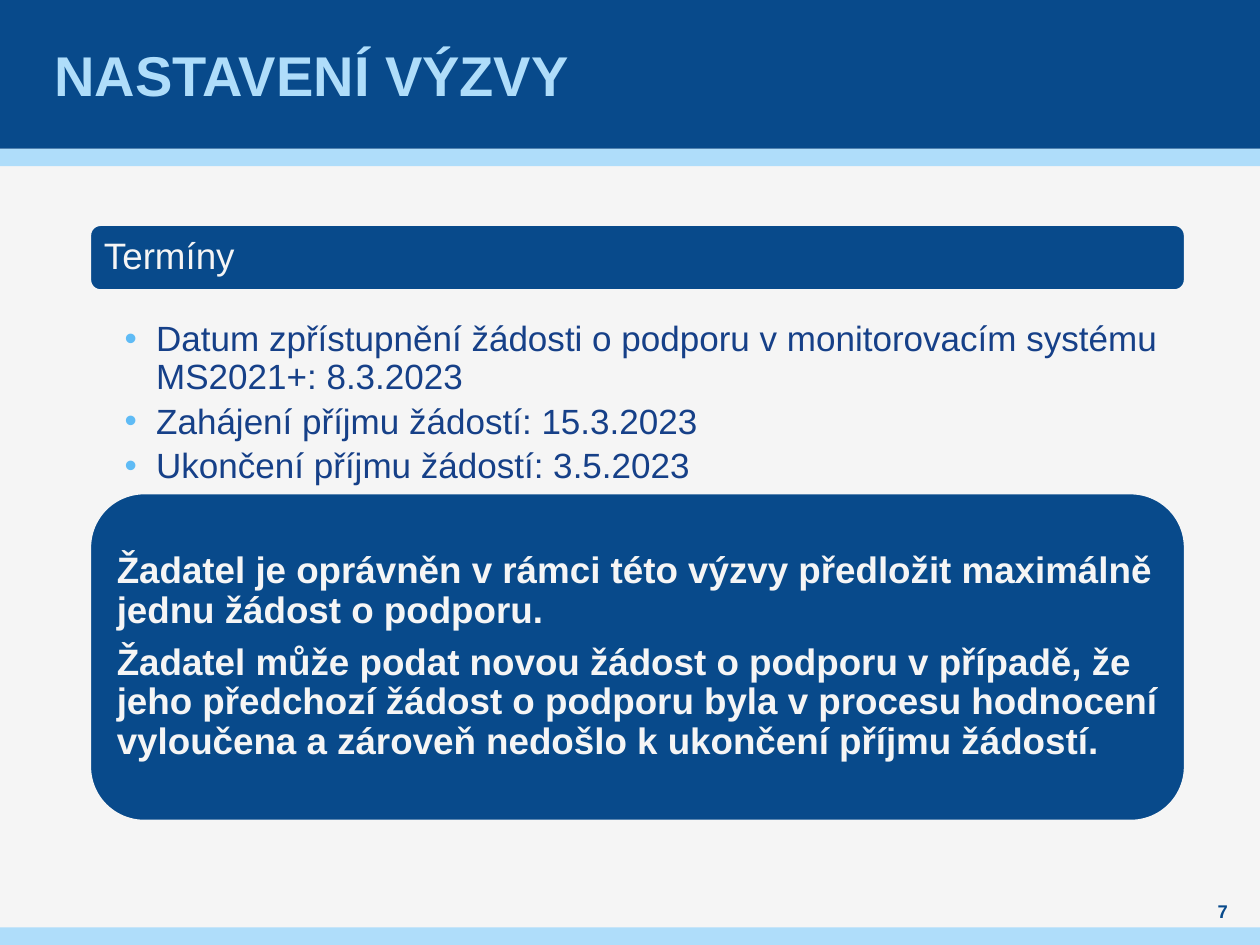
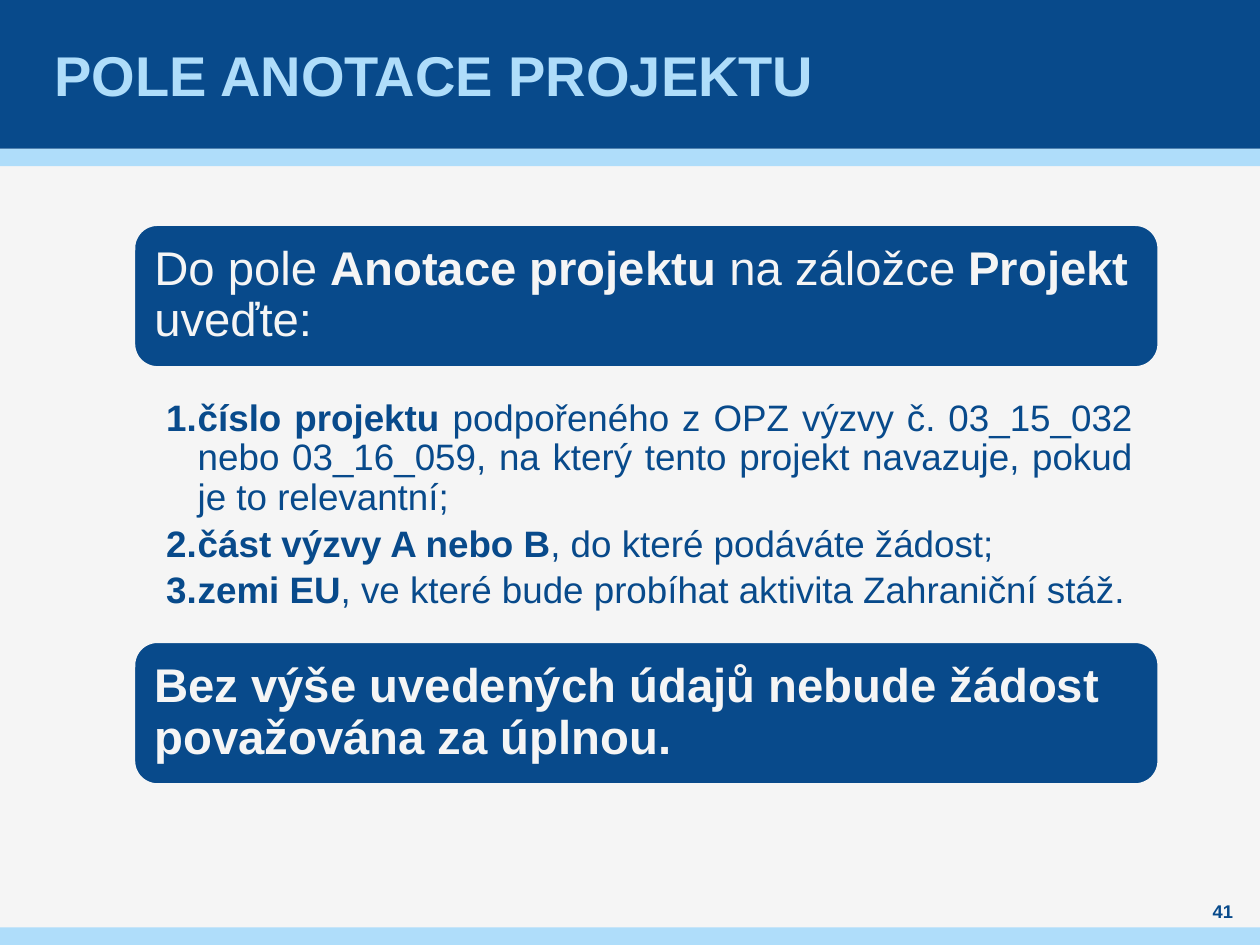
from dataclasses import dataclass

from lxml.etree import SubElement
from pptx import Presentation
from pptx.dml.color import RGBColor
from pptx.enum.shapes import MSO_SHAPE
from pptx.enum.text import MSO_ANCHOR, PP_ALIGN
from pptx.oxml.ns import qn
from pptx.util import Inches, Pt


@dataclass(frozen=True)
class Theme:
    font: str = "Arial"
    paper: str = "F5F5F5"
    navy: str = "084A8B"
    sky: str = "AFDDFA"
    bullet: str = "5FBBF5"
    dates: str = "164088"
    title_size: float = 32
    statement_size: float = 27
    body_size: float = 21
    dates_size: float = 20
    number_size: float = 10.5
    outline: float = 2
    line_spacing: float = 0.9
    panel_gap: float = 0.35  # share of the type size
    list_gap: float = 0.2


THEME = Theme()
WIDTH, HEIGHT = 10, 7.5
HEADER_HEIGHT, STRIPE_HEIGHT = 1.18, 0.14


def rgb(colour):
    return RGBColor.from_string(colour)


def add_block(slide, kind, box, fill, outline=None):
    block = slide.shapes.add_shape(kind, *map(Inches, box))
    block.shadow.inherit = False
    block.fill.solid()
    block.fill.fore_color.rgb = rgb(fill)
    if outline:
        block.line.color.rgb = rgb(outline)
        block.line.width = Pt(THEME.outline)
    else:
        block.line.fill.background()
    return block


def write(shape, paragraphs, size, colour, insets, anchor=MSO_ANCHOR.MIDDLE,
          align=PP_ALIGN.LEFT, gap=None):
    """Fill a shape; every paragraph is a list of (text, bold) runs."""
    frame = shape.text_frame
    frame.word_wrap = True
    frame.vertical_anchor = anchor
    (frame.margin_left, frame.margin_top,
     frame.margin_right, frame.margin_bottom) = map(Inches, insets)
    for index, runs in enumerate(paragraphs):
        paragraph = frame.add_paragraph() if index else frame.paragraphs[0]
        paragraph.alignment = align
        if gap is not None:
            paragraph.line_spacing = THEME.line_spacing
            paragraph.space_after = Pt(round(size * gap))
        for text, bold in runs:
            run = paragraph.add_run()
            run.text = text
            run.font.name = THEME.font
            run.font.size = Pt(size)
            run.font.bold = bold
            run.font.color.rgb = rgb(colour)
    return frame


def add_panel(slide, box, paragraphs, size, inset):
    """Rounded navy panel with light text."""
    panel = add_block(slide, MSO_SHAPE.ROUNDED_RECTANGLE, box, THEME.navy, THEME.paper)
    write(panel, paragraphs, size, THEME.paper, (inset,) * 4, gap=THEME.panel_gap)


def add_list(slide, box, items, size, colour, insets, numbered=False):
    """Bulleted or numbered list with a hanging indent."""
    area = slide.shapes.add_textbox(*map(Inches, box))
    frame = write(area, items, size, colour, insets, MSO_ANCHOR.TOP, gap=THEME.list_gap)
    for paragraph in frame.paragraphs:
        properties = paragraph._p.get_or_add_pPr()
        properties.set("marL", str(Inches(0.25)))
        properties.set("indent", str(-Inches(0.25)))
        if numbered:
            SubElement(properties, qn("a:buFont"), typeface=THEME.font)
            SubElement(properties, qn("a:buAutoNum"), type="arabicPeriod")
        else:
            bullet_colour = SubElement(properties, qn("a:buClr"))
            SubElement(bullet_colour, qn("a:srgbClr"), val=THEME.bullet)
            SubElement(properties, qn("a:buFont"), typeface=THEME.font)
            SubElement(properties, qn("a:buChar"), char="•")
    return frame


def add_base_slide(deck, title, number):
    """Background, bands, title and slide number."""
    slide = deck.slides.add_slide(deck.slide_layouts[6])
    slide.background.fill.solid()
    slide.background.fill.fore_color.rgb = rgb(THEME.paper)

    # Bands
    for top, height, fill in (
        (HEADER_HEIGHT, STRIPE_HEIGHT, THEME.sky),
        (0, HEADER_HEIGHT, THEME.navy),
        (HEIGHT - STRIPE_HEIGHT, STRIPE_HEIGHT, THEME.sky),
    ):
        add_block(slide, MSO_SHAPE.RECTANGLE, (0, top, WIDTH, height), fill)

    # Title and number
    heading = slide.shapes.add_textbox(*map(Inches, (0.39, 0, 9.21, HEADER_HEIGHT)))
    write(heading, [[(title, True)]], THEME.title_size, THEME.sky, (0.04, 0, 0.04, 0))
    page = slide.shapes.add_textbox(*map(Inches, (9.45, 7.13, 0.51, 0.2)))
    write(page, [[(number, True)]], THEME.number_size, THEME.navy, (0,) * 4,
          align=PP_ALIGN.CENTER)
    return slide


def add_call_terms(slide, left, top, width):
    """Dates of the call and the rule on applications."""
    add_panel(slide, (left, top, width, 0.53), [[("Termíny", False)]],
              THEME.body_size, 0.09)
    dates = [
        "Datum zpřístupnění žádosti o podporu v monitorovacím systému MS2021+: 8.3.2023",
        "Zahájení příjmu žádostí: 15.3.2023",
        "Ukončení příjmu žádostí: 3.5.2023",
    ]
    add_list(slide, (left, top + 0.74, width, 1.51), [[(date, False)] for date in dates],
             THEME.dates_size, THEME.dates, (0.28, 0.03, 0.16, 0.03))
    rules = [
        "Žadatel je oprávněn v rámci této výzvy předložit maximálně jednu žádost o podporu.",
        "Žadatel může podat novou žádost o podporu v případě, že jeho předchozí žádost "
        "o podporu byla v procesu hodnocení vyloučena a zároveň nedošlo k ukončení "
        "příjmu žádostí.",
    ]
    add_panel(slide, (left, top + 2.13, width, 2.61), [[(rule, True)] for rule in rules],
              THEME.body_size, 0.09)


def add_annotation_guide(slide, left, top, width):
    """What the annotation field must contain."""
    panel_height = 1.14
    instruction = [("Do pole ", False), ("Anotace projektu ", True),
                   ("na záložce ", False), ("Projekt ", True), ("uveďte:", False)]
    add_panel(slide, (left, top, width, panel_height), [instruction],
              THEME.statement_size, 0.11)
    required = [
        [("číslo projektu ", True),
         ("podpořeného z OPZ výzvy č. 03_15_032 nebo 03_16_059, na který tento projekt "
          "navazuje, pokud je to relevantní;", False)],
        [("část výzvy A nebo B", True), (", do které podáváte žádost;", False)],
        [("zemi EU", True), (", ve které bude probíhat aktivita Zahraniční stáž.", False)],
    ]
    frame = add_list(slide, (left, top + 1.35, width, 1.74), required, THEME.body_size,
                     THEME.navy, (0.26, 0.04, 0.21, 0.04), numbered=True)
    frame.paragraphs[0].alignment = PP_ALIGN.JUSTIFY
    warning = "Bez výše uvedených údajů nebude žádost považována za úplnou."
    add_panel(slide, (left, top + 3.31, width, panel_height), [[(warning, True)]],
              THEME.statement_size, 0.11)


def main():
    deck = Presentation()
    deck.slide_width, deck.slide_height = Inches(WIDTH), Inches(HEIGHT)
    add_call_terms(add_base_slide(deck, "NASTAVENÍ VÝZVY", "7"), 0.71, 1.78, 8.7)
    add_annotation_guide(add_base_slide(deck, "POLE ANOTACE PROJEKTU", "41"),
                         1.06, 1.78, 8.14)
    deck.save("out.pptx")


if __name__ == "__main__":
    main()
